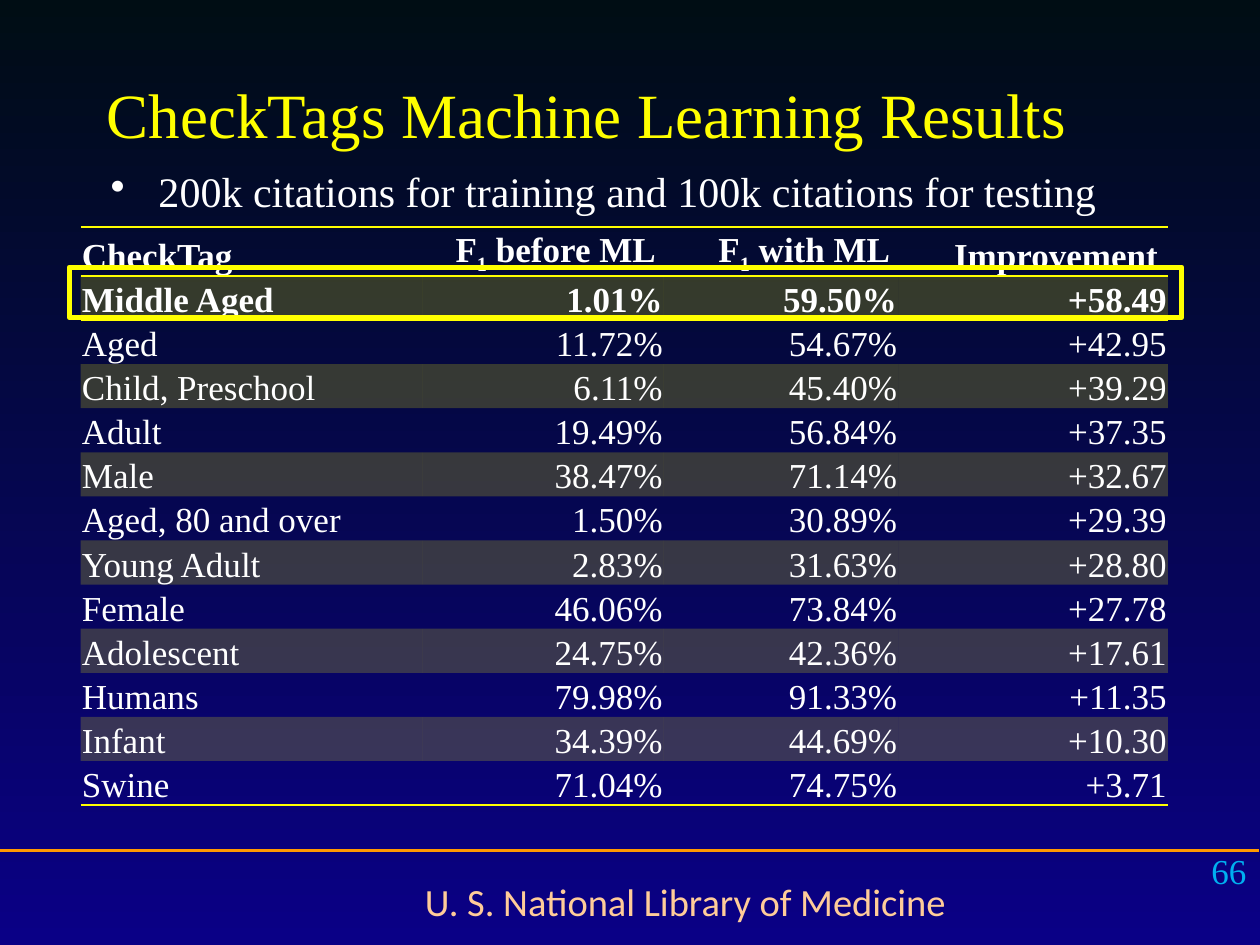
from pptx import Presentation
from pptx.dml.color import RGBColor
from pptx.enum.shapes import MSO_CONNECTOR, MSO_SHAPE
from pptx.enum.text import MSO_ANCHOR, PP_ALIGN
from pptx.oxml.ns import qn
from pptx.util import Inches, Pt
from lxml import etree

LEFT, CENTER, RIGHT = PP_ALIGN.LEFT, PP_ALIGN.CENTER, PP_ALIGN.RIGHT
TOP, BOTTOM = MSO_ANCHOR.TOP, MSO_ANCHOR.BOTTOM
RECTANGLE, STRAIGHT = MSO_SHAPE.RECTANGLE, MSO_CONNECTOR.STRAIGHT

NIGHT = RGBColor(0x00, 0x0D, 0x14)
INDIGO = RGBColor(0x0A, 0x00, 0x86)
YELLOW = RGBColor(0xFF, 0xFF, 0x00)
ORANGE = RGBColor(0xFF, 0x99, 0x00)
PEACH = RGBColor(0xFF, 0xCC, 0x99)
CYAN = RGBColor(0x00, 0xB0, 0xF0)
WHITE = RGBColor(0xFF, 0xFF, 0xFF)

SERIF, SANS = "Times New Roman", "Calibri"
PLAIN_TABLE = "{2D5ABB26-0587-4C30-8999-92F81FD0307C}"
COL, ROW = Inches(10) / 100, Inches(7.5) / 100

COLUMN_SHARES = [27.1, 19.2, 18.6, 21.4]
HEADINGS = [["CheckTag"], ["F", "1", " before ML "], ["F", "1", " with ML "], ["Improvement "]]
RESULTS = [
    ("Middle Aged", "1.01%", "59.50%", "+58.49"),
    ("Aged", "11.72%", "54.67%", "+42.95"),
    ("Child, Preschool", "6.11%", "45.40%", "+39.29"),
    ("Adult", "19.49%", "56.84%", "+37.35"),
    ("Male", "38.47%", "71.14%", "+32.67"),
    ("Aged, 80 and over", "1.50%", "30.89%", "+29.39"),
    ("Young Adult", "2.83%", "31.63%", "+28.80"),
    ("Female", "46.06%", "73.84%", "+27.78"),
    ("Adolescent", "24.75%", "42.36%", "+17.61"),
    ("Humans", "79.98%", "91.33%", "+11.35"),
    ("Infant", "34.39%", "44.69%", "+10.30"),
    ("Swine", "71.04%", "74.75%", "+3.71"),
]


def grid(left, top, width, height):
    return [round(left * COL), round(top * ROW), round(width * COL), round(height * ROW)]


def style(font, size, color, name=SERIF, bold=False):
    font.size, font.name, font.bold = Pt(size), name, bold
    font.color.rgb = color


def add_text(slide, box, text, size, color, name=SERIF, align=LEFT, anchor=TOP):
    frame = slide.shapes.add_textbox(*box).text_frame
    frame.word_wrap = True
    frame.vertical_anchor = anchor
    frame.text = text
    line = frame.paragraphs[0]
    line.alignment = align
    style(line.runs[0].font, size, color, name)
    return line


def paint_background(slide):
    fill = slide.background.fill
    fill.gradient()
    fill.gradient_angle = 270
    for stop, color in zip(fill.gradient_stops, (NIGHT, INDIGO)):
        stop.color.rgb = color


def add_footer(slide, box):
    left, top, width, height = box
    rule = slide.shapes.add_connector(STRAIGHT, left, top, left + width, top)
    rule.line.color.rgb = ORANGE
    rule.line.width = Pt(1.5)
    etree.SubElement(rule._element.spPr, qn("a:effectLst"))
    owner_box = [left + round(width * 0.23), top + round(height * 0.23),
                 round(width * 0.63), round(height * 0.63)]
    add_text(slide, owner_box, "U. S. National Library of Medicine", 22, PEACH, SANS, CENTER)
    number_box = [left + round(width * 0.77), top - round(height * 0.08),
                  round(width * 0.23), round(height * 0.7)]
    add_text(slide, number_box, "66", 20, CYAN, align=RIGHT)


def add_bullet(slide, box, text):
    line = add_text(slide, box, text, 24, WHITE)
    properties = line._p.get_or_add_pPr()
    properties.set("marL", str(Inches(0.38)))
    properties.set("indent", str(-Inches(0.38)))
    color = etree.SubElement(properties, qn("a:buClr"))
    etree.SubElement(color, qn("a:srgbClr"), val=str(WHITE))
    etree.SubElement(properties, qn("a:buChar"), char="•")


def add_border(cell, side):
    border = etree.Element(qn(f"a:{side}"), w=str(Pt(1)))
    fill = etree.SubElement(border, qn("a:solidFill"))
    etree.SubElement(fill, qn("a:srgbClr"), val=str(YELLOW))
    cell._tc.get_or_add_tcPr().insert(0, border)


def fill_cell(cell, pieces, align, bold, banded):
    cell.margin_left = cell.margin_right = cell.margin_top = Inches(0.01)
    cell.margin_bottom = 0
    cell.vertical_anchor = BOTTOM
    line = cell.text_frame.paragraphs[0]
    line.alignment = align
    for position, piece in enumerate(pieces):
        run = line.add_run()
        run.text = piece
        style(run.font, 20, WHITE, bold=bold)
        if position == 1:
            run._r.get_or_add_rPr().set("baseline", "-25000")
    if banded:
        cell.fill.solid()
        cell.fill.fore_color.rgb = YELLOW
        color = cell._tc.tcPr.find(qn("a:solidFill")).find(qn("a:srgbClr"))
        etree.SubElement(color, qn("a:alpha"), val="20000")
    else:
        cell.fill.background()


def add_results(slide, box):
    rows = [HEADINGS] + [[[value] for value in result] for result in RESULTS]
    last = len(rows) - 1
    table = slide.shapes.add_table(len(rows), len(HEADINGS), *box).table
    table.first_row = table.horz_banding = False
    table._tbl.tblPr.find(qn("a:tableStyleId")).text = PLAIN_TABLE
    for column, share in zip(table.columns, COLUMN_SHARES):
        column.width = round(box[2] * share / sum(COLUMN_SHARES))
    for r, row in enumerate(rows):
        table.rows[r].height = round(box[3] / len(rows))
        for c, pieces in enumerate(row):
            cell = table.cell(r, c)
            fill_cell(cell, pieces, RIGHT if c else LEFT, r < 2, r % 2 == 1)
            if r in (0, last):
                add_border(cell, "lnB")
            if r < 2:
                add_border(cell, "lnT")


def add_highlight(slide, box):
    frame = slide.shapes.add_shape(RECTANGLE, *box)
    frame.shadow.inherit = False
    frame.fill.background()
    frame.line.color.rgb = YELLOW
    frame.line.width = Pt(3)


def main():
    deck = Presentation()
    deck.slide_width, deck.slide_height = round(100 * COL), round(100 * ROW)
    slide = deck.slides.add_slide(deck.slide_layouts[6])
    paint_background(slide)
    add_footer(slide, grid(-0.1, 90, 100, 10))
    add_text(slide, grid(7.5, 6.67, 85, 10), "CheckTags Machine Learning Results",
             36, YELLOW, anchor=BOTTOM)
    add_results(slide, grid(6.4, 24, 86.3, 60.67))
    add_bullet(slide, grid(7.8, 16.9, 85, 7.2),
               "200k citations for training and 100k citations for testing")
    add_highlight(slide, grid(5.5, 28.27, 88.3, 5.33))
    deck.save("out.pptx")


if __name__ == "__main__":
    main()
